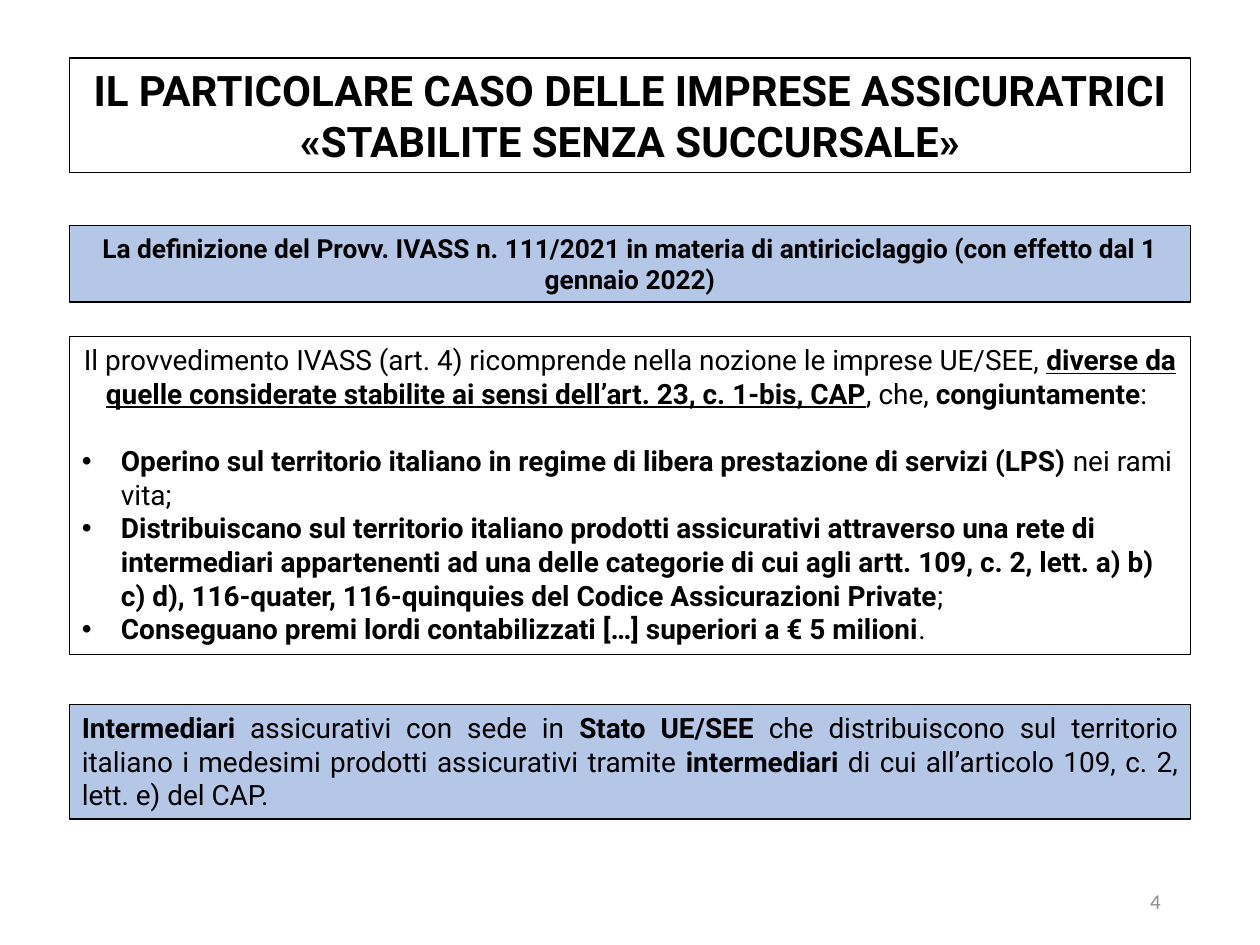
import pptx
import pptx.util
import pptx.dml.color
import pptx.enum.shapes
import pptx.enum.text
import pptx.oxml.ns
import lxml.etree

Cm = pptx.util.Cm
Pt = pptx.util.Pt
RGBColor = pptx.dml.color.RGBColor
ALIGN = pptx.enum.text.PP_ALIGN
ANCHOR = pptx.enum.text.MSO_ANCHOR

BLACK = RGBColor(0x00, 0x00, 0x00)
WHITE = RGBColor(0xFF, 0xFF, 0xFF)
LIGHT_BLUE = RGBColor(0xB4, 0xC7, 0xE7)
GREY = RGBColor(0x8C, 0x8C, 0x8C)

LEFT, WIDTH = Cm(1.4), Cm(22.6)
BULLET_INDENT = Cm(0.79)


def add_box(top, height, fill, line_width, anchor):
    """Add a full-width outlined box and return its text frame."""
    shape = slide.shapes.add_shape(
        pptx.enum.shapes.MSO_SHAPE.RECTANGLE, LEFT, Cm(top), WIDTH, Cm(height))
    shape.shadow.inherit = False
    shape.fill.solid()
    shape.fill.fore_color.rgb = fill
    shape.line.color.rgb = BLACK
    shape.line.width = Pt(line_width)
    shape.text_frame.word_wrap = True
    shape.text_frame.vertical_anchor = anchor
    return shape.text_frame


def write(paragraph, runs, size, alignment, font="Roboto", color=BLACK):
    """Write (text, style) runs, where style holds b for bold and u for underline."""
    paragraph.alignment = alignment
    for text, style in runs:
        run = paragraph.add_run()
        run.text = text
        run.font.name = font
        run.font.size = Pt(size)
        run.font.color.rgb = color
        run.font.bold = "b" in style
        run.font.underline = "u" in style


presentation = pptx.Presentation()
presentation.slide_width = Cm(25.4)
presentation.slide_height = Cm(19.05)
slide = presentation.slides.add_slide(presentation.slide_layouts[6])

# Title
title = add_box(1.17, 2.31, WHITE, 1, ANCHOR.MIDDLE)
title.margin_left = title.margin_right = Cm(0.13)
title.margin_top = title.margin_bottom = Cm(0.13)
write(title.paragraphs[0],
      [("IL PARTICOLARE CASO DELLE IMPRESE ASSICURATRICI «STABILITE SENZA SUCCURSALE»", "b")],
      24, ALIGN.CENTER)

# Definition heading
heading = add_box(4.55, 1.54, LIGHT_BLUE, 0.75, ANCHOR.TOP)
write(heading.paragraphs[0],
      [("La definizione del Provv. IVASS n. 111/2021 in materia di antiriciclaggio "
        "(con effetto dal 1 gennaio 2022)", "b")],
      15, ALIGN.CENTER)

# Conditions
conditions = add_box(6.78, 6.41, WHITE, 0.75, ANCHOR.TOP)
introduction = conditions.paragraphs[0]
introduction.space_after = Pt(19.5)
write(introduction, [
    ("Il provvedimento IVASS (art. 4) ricomprende nella nozione le imprese UE/SEE, ", ""),
    ("diverse da quelle considerate stabilite ai sensi dell’art. 23, c. 1-bis, CAP", "bu"),
    (", che, ", ""),
    ("congiuntamente", "b"),
    (": ", ""),
], 16, ALIGN.CENTER)

bullets = [
    ("Operino sul territorio italiano in regime di libera prestazione di servizi (LPS) ",
     "nei rami vita;"),
    ("Distribuiscano sul territorio italiano prodotti assicurativi attraverso una rete di "
     "intermediari appartenenti ad una delle categorie di cui agli artt. 109, c. 2, "
     "lett. a) b) c) d), 116-quater, 116-quinquies del Codice Assicurazioni Private", ";"),
    ("Conseguano premi lordi contabilizzati […] superiori a € 5 milioni", "."),
]
for bold_text, plain_text in bullets:
    paragraph = conditions.add_paragraph()
    write(paragraph, [(bold_text, "b"), (plain_text, "")], 16, ALIGN.LEFT)
    properties = paragraph._p.get_or_add_pPr()
    properties.set("marL", str(BULLET_INDENT))
    properties.set("indent", str(-BULLET_INDENT))
    bullet_font = lxml.etree.SubElement(properties, pptx.oxml.ns.qn("a:buFont"))
    bullet_font.set("typeface", "Arial")
    bullet = lxml.etree.SubElement(properties, pptx.oxml.ns.qn("a:buChar"))
    bullet.set("char", "•")

# Intermediaries
intermediaries = add_box(14.2, 2.31, LIGHT_BLUE, 0.75, ANCHOR.TOP)
write(intermediaries.paragraphs[0], [
    ("Intermediari", "b"),
    (" assicurativi con sede in ", ""),
    ("Stato UE/SEE ", "b"),
    ("che distribuiscono sul territorio italiano i medesimi prodotti assicurativi tramite ", ""),
    ("intermediari", "b"),
    (" di cui all’articolo 109, c. 2, lett. e) del CAP.", ""),
], 16, ALIGN.JUSTIFY)

# Page number
page_number = slide.shapes.add_textbox(Cm(17.93), Cm(17.65), Cm(5.72), Cm(1.02)).text_frame
page_number.word_wrap = True
page_number.vertical_anchor = ANCHOR.MIDDLE
write(page_number.paragraphs[0], [("4", "")], 12, ALIGN.RIGHT, "Calibri", GREY)

presentation.save("out.pptx")
